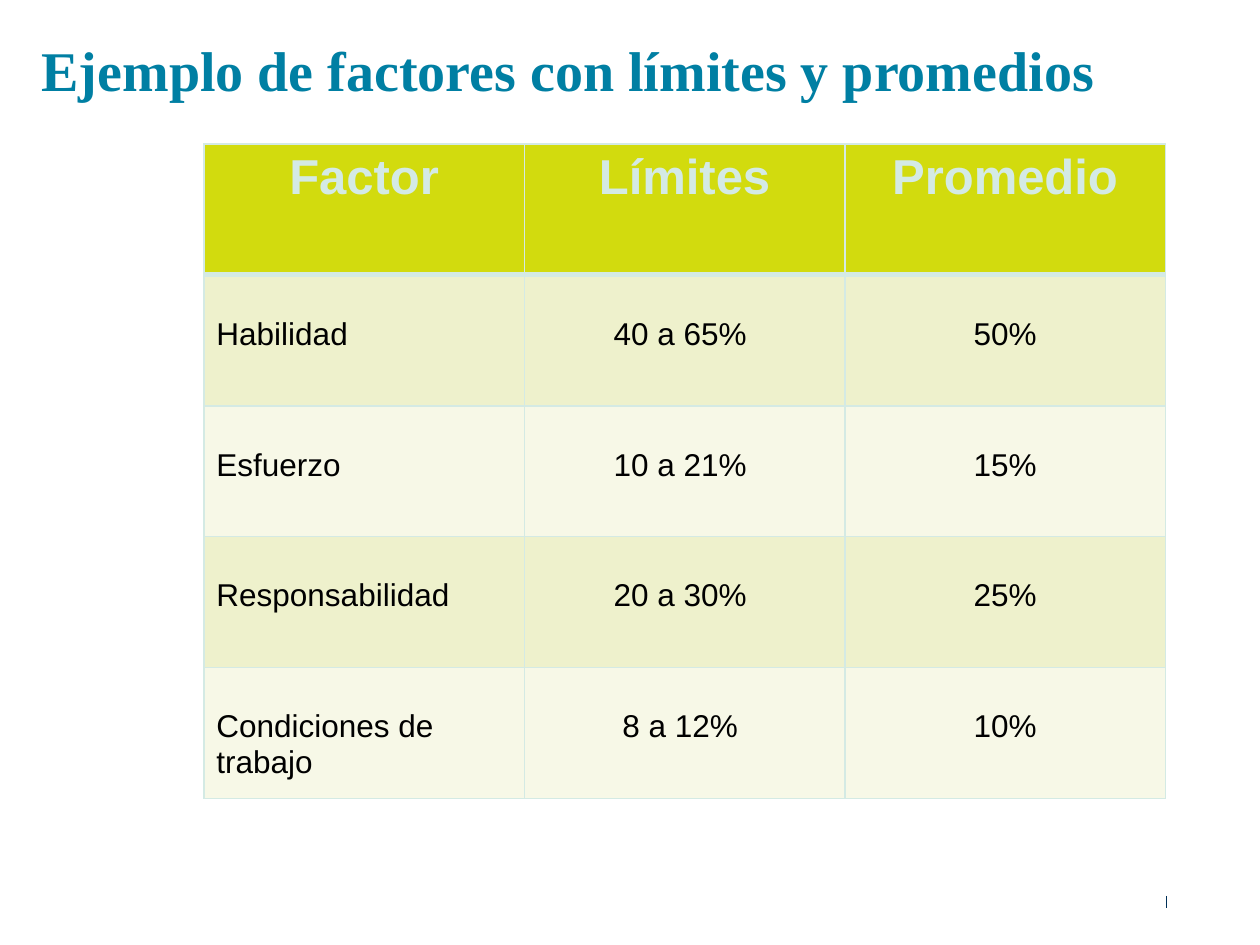
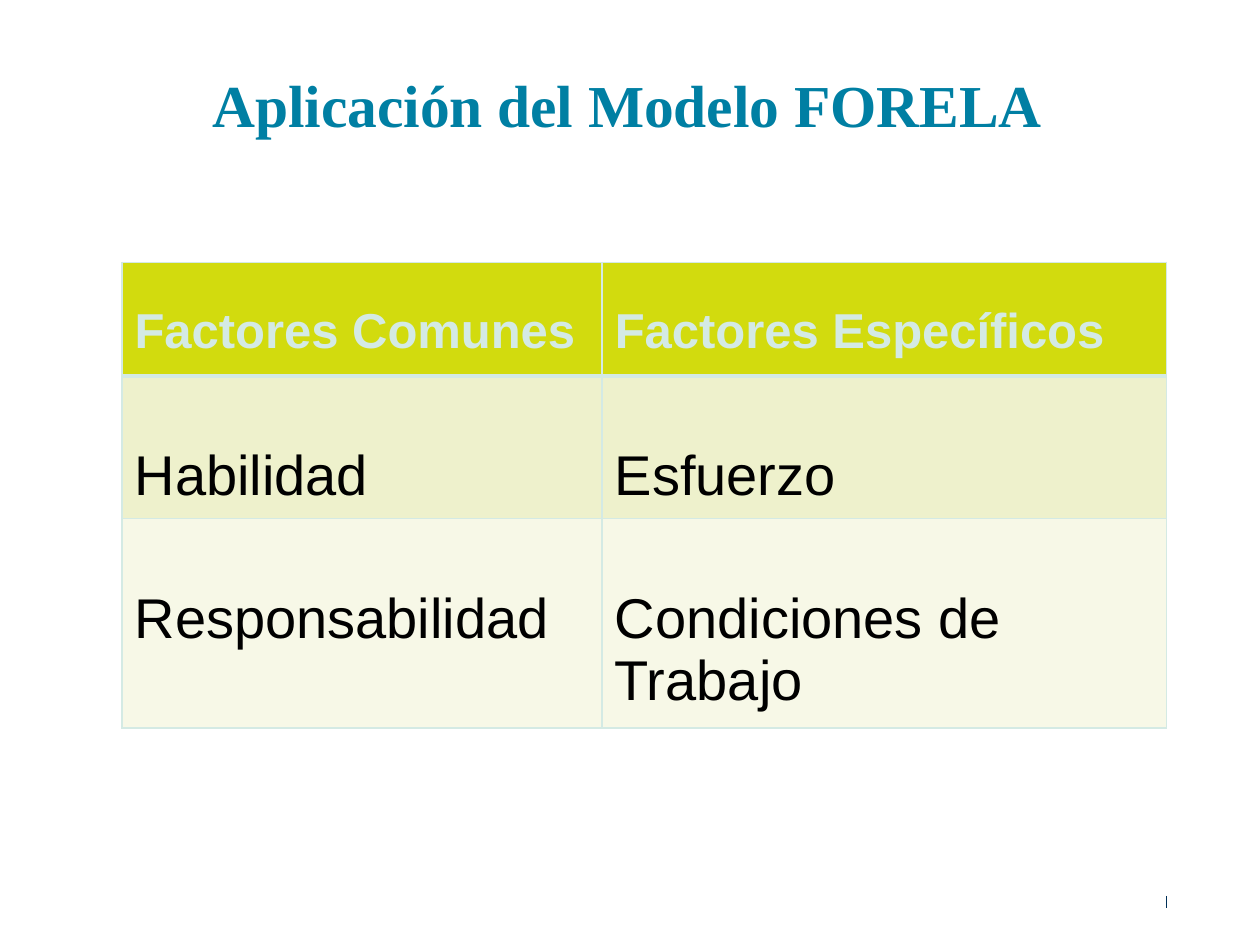
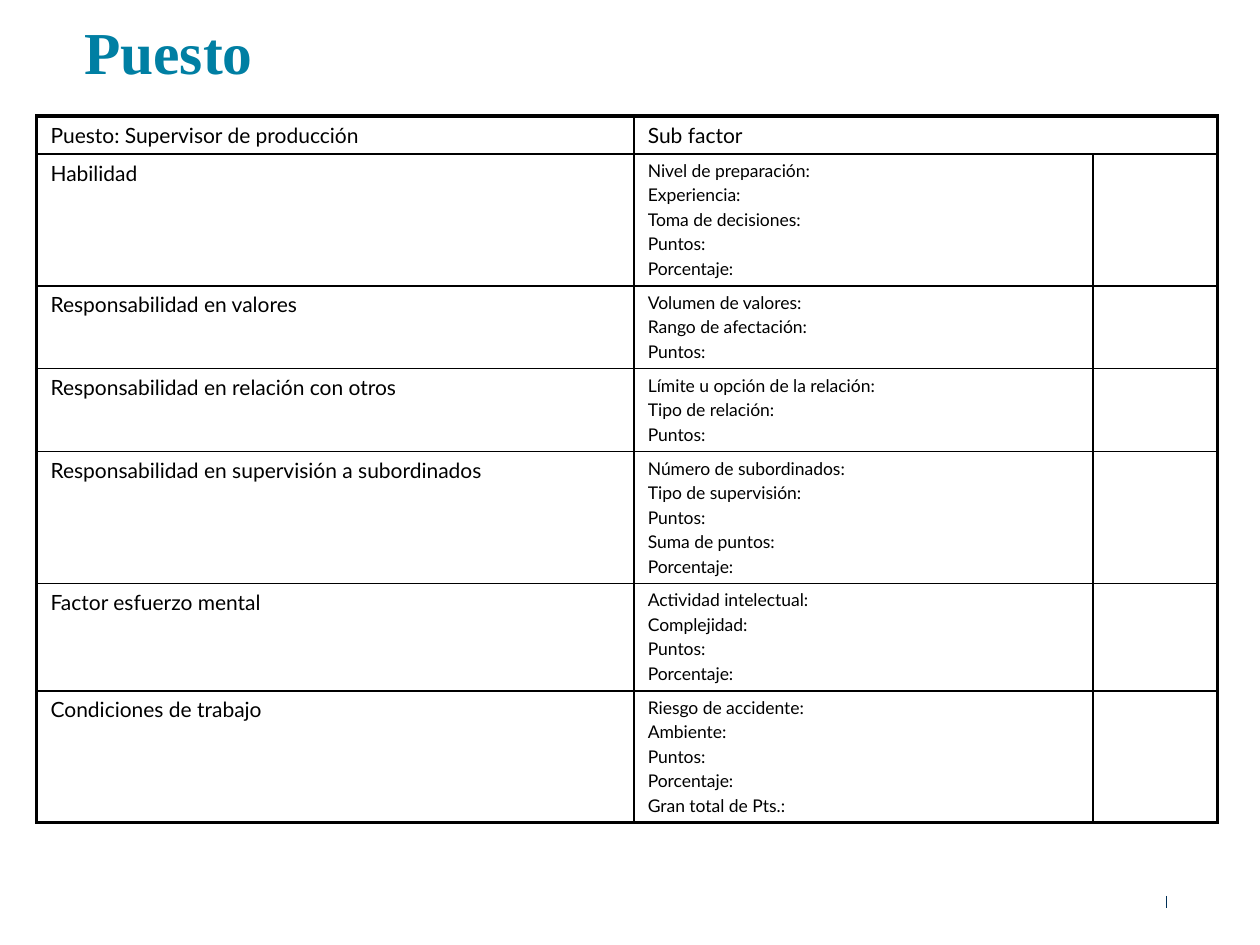
from lxml.etree import SubElement
from pptx import Presentation
from pptx.dml.color import RGBColor
from pptx.enum.text import MSO_ANCHOR, PP_ALIGN
from pptx.oxml.ns import qn
from pptx.util import Cm, Pt

TITLE_BLUE = RGBColor(0x00, 0x7F, 0xA3)
NAVY = RGBColor(0x00, 0x30, 0x57)
LIME = RGBColor(0xD2, 0xDB, 0x0E)
MINT = RGBColor(0xD4, 0xEA, 0xE4)
BAND_DARK = RGBColor(0xEE, 0xF1, 0xCC)
BAND_LIGHT = RGBColor(0xF7, 0xF8, 0xE7)
BLACK = RGBColor(0x00, 0x00, 0x00)

presentation = Presentation()
presentation.slide_width = Cm(25.4)
presentation.slide_height = Cm(19.05)


def add_titled_slide(title, left, top, width, height, size, alignment=PP_ALIGN.LEFT):
    """Add a slide with its title and the small footer tick."""
    slide = presentation.slides.add_slide(presentation.slide_layouts[6])
    tick = slide.shapes.add_connector(1, Cm(23.52), Cm(18.06), Cm(23.52), Cm(18.31))
    tick.line.color.rgb = NAVY
    tick.line.width = Pt(0.5)
    SubElement(tick.element.spPr, qn("a:effectLst"))

    text_frame = slide.shapes.add_textbox(Cm(left), Cm(top), Cm(width), Cm(height)).text_frame
    text_frame.word_wrap = True
    text_frame.vertical_anchor = MSO_ANCHOR.TOP
    text_frame.margin_left = text_frame.margin_right = 0
    text_frame.margin_top = text_frame.margin_bottom = 0
    text_frame.text = title
    paragraph = text_frame.paragraphs[0]
    paragraph.alignment = alignment
    paragraph.line_spacing = Pt(40)
    font = paragraph.runs[0].font
    font.name, font.size, font.bold = "Times New Roman", Pt(size), True
    font.color.rgb = TITLE_BLUE
    return slide


def set_borders(cell, color, left=1, right=1, top=1, bottom=1):
    """Draw the four cell borders, widths in points; call before filling."""
    properties = cell._tc.get_or_add_tcPr()
    for side, width in (("L", left), ("R", right), ("T", top), ("B", bottom)):
        line = SubElement(properties, qn(f"a:ln{side}"), w=str(Pt(width)))
        fill = SubElement(line, qn("a:solidFill"))
        SubElement(fill, qn("a:srgbClr"), val=str(color))


# Slides 1 and 2: banded factor tables
limits_slide = add_titled_slide(
    "Ejemplo de factores con límites y promedios", 0.84, 0.66, 23.93, 2.24, 32)
model_slide = add_titled_slide(
    "Aplicación del Modelo FORELA", 0, 1.4, 25.3, 1.83, 34, PP_ALIGN.CENTER)

limits_rows = [
    ("Factor", "Límites", "Promedio"),
    ("Habilidad", "40 a 65% ", "50%"),
    ("Esfuerzo", "10 a 21% ", "15%"),
    ("Responsabilidad", "20 a 30% ", "25%"),
    ("Condiciones de trabajo", "8 a 12% ", "10%"),
]
model_rows = [
    ("Factores Comunes", "Factores Específicos"),
    ("Habilidad", "Esfuerzo"),
    ("Responsabilidad", "Condiciones de Trabajo"),
]
# slide, rows, left, top, column widths, row heights,
# header and body top margins, body size, centred values
factor_tables = [
    (limits_slide, limits_rows, 4.11, 2.9, [6.46] * 3, [2.64] * 5, 0.13, 0.84, 18, True),
    (model_slide, model_rows, 2.46, 5.29, [9.68, 11.38], [2.29, 2.8, 4.04], 0.84, 1.39, 32, False),
]
for (slide, rows, left, top, widths, heights,
     header_margin, body_margin, body_size, centred) in factor_tables:
    table = slide.shapes.add_table(
        len(rows), len(widths), Cm(left), Cm(top), Cm(sum(widths)), Cm(sum(heights))).table
    table.horz_banding = table.first_row = False
    for column, width in zip(table.columns, widths):
        column.width = Cm(width)
    for row_index, (row, height) in enumerate(zip(rows, heights)):
        table.rows[row_index].height = Cm(height)
        is_header = row_index == 0
        for column_index, text in enumerate(row):
            cell = table.cell(row_index, column_index)
            set_borders(cell, MINT, top=3 if row_index == 1 else 1, bottom=3 if is_header else 1)
            cell.fill.solid()
            band = BAND_DARK if row_index % 2 else BAND_LIGHT
            cell.fill.fore_color.rgb = LIME if is_header else band
            cell.margin_top = Cm(header_margin if is_header else body_margin)
            cell.text_frame.text = text
            paragraph = cell.text_frame.paragraphs[0]
            if centred and (is_header or column_index > 0):
                paragraph.alignment = PP_ALIGN.CENTER
            font = paragraph.runs[0].font
            font.name, font.bold = "Arial", is_header
            font.size = Pt(28 if is_header else body_size)
            font.color.rgb = MINT if is_header else BLACK

# Slide 3: job evaluation form
form_slide = add_titled_slide("Puesto", 1.7, 0.33, 12.47, 1.32, 34)
form_rows = [
    ("Puesto: Supervisor de producción", ["Sub factor"]),
    ("Habilidad", ["Nivel de preparación:", "Experiencia:", "Toma de decisiones:",
                   "Puntos:", "Porcentaje:"]),
    ("Responsabilidad en valores", ["Volumen de valores:", "Rango de afectación:", "Puntos:"]),
    ("Responsabilidad en relación con otros",
     ["Límite u opción de la relación:", "Tipo de relación:", "Puntos:"]),
    ("Responsabilidad en supervisión a subordinados",
     ["Número de subordinados:", "Tipo de supervisión:", "Puntos:",
      "Suma de puntos:", "Porcentaje:"]),
    ("Factor esfuerzo mental",
     ["Actividad intelectual:", "Complejidad:", "Puntos:", "Porcentaje:"]),
    ("Condiciones de trabajo", ["Riesgo de accidente:", "Ambiente:", "Puntos:",
                                "Porcentaje:", "Gran total de Pts.:"]),
]
form_widths = [12.04, 9.25, 2.51]
# Each row is as high as its list of sub factors
form_heights = [0.76] + [0.2 + 0.49 * len(lines) for _, lines in form_rows[1:]]
last_row = len(form_rows) - 1
table = form_slide.shapes.add_table(
    len(form_rows), 3, Cm(0.74), Cm(2.34), Cm(sum(form_widths)), Cm(sum(form_heights))).table
table.horz_banding = table.first_row = False
for column, width in zip(table.columns, form_widths):
    column.width = Cm(width)
table.cell(0, 1).merge(table.cell(0, 2))

for row_index, (factor, lines) in enumerate(form_rows):
    table.rows[row_index].height = Cm(form_heights[row_index])
    for column_index, cell_lines in enumerate(([factor], lines, [])):
        cell = table.cell(row_index, column_index)
        reaches_right = column_index == 2 or cell.is_merge_origin
        set_borders(cell, BLACK,
                    left=2.25 if column_index == 0 else 1,
                    right=2.25 if reaches_right else 1,
                    top=2.25 if row_index == 0 else 1,
                    bottom=2.25 if row_index == last_row else 1)
        cell.fill.background()
        cell.margin_left = cell.margin_right = Cm(0.28)
        if not cell_lines:
            continue
        size = 10 if column_index == 1 and row_index > 0 else 12
        cell.text_frame.text = "\n".join(cell_lines)
        for line_index, paragraph in enumerate(cell.text_frame.paragraphs):
            if line_index > 0:
                paragraph.space_before = Pt(2)
            font = paragraph.runs[0].font
            font.name, font.size, font.bold = "Lato", Pt(size), False
            font.color.rgb = BLACK

presentation.save("out.pptx")
